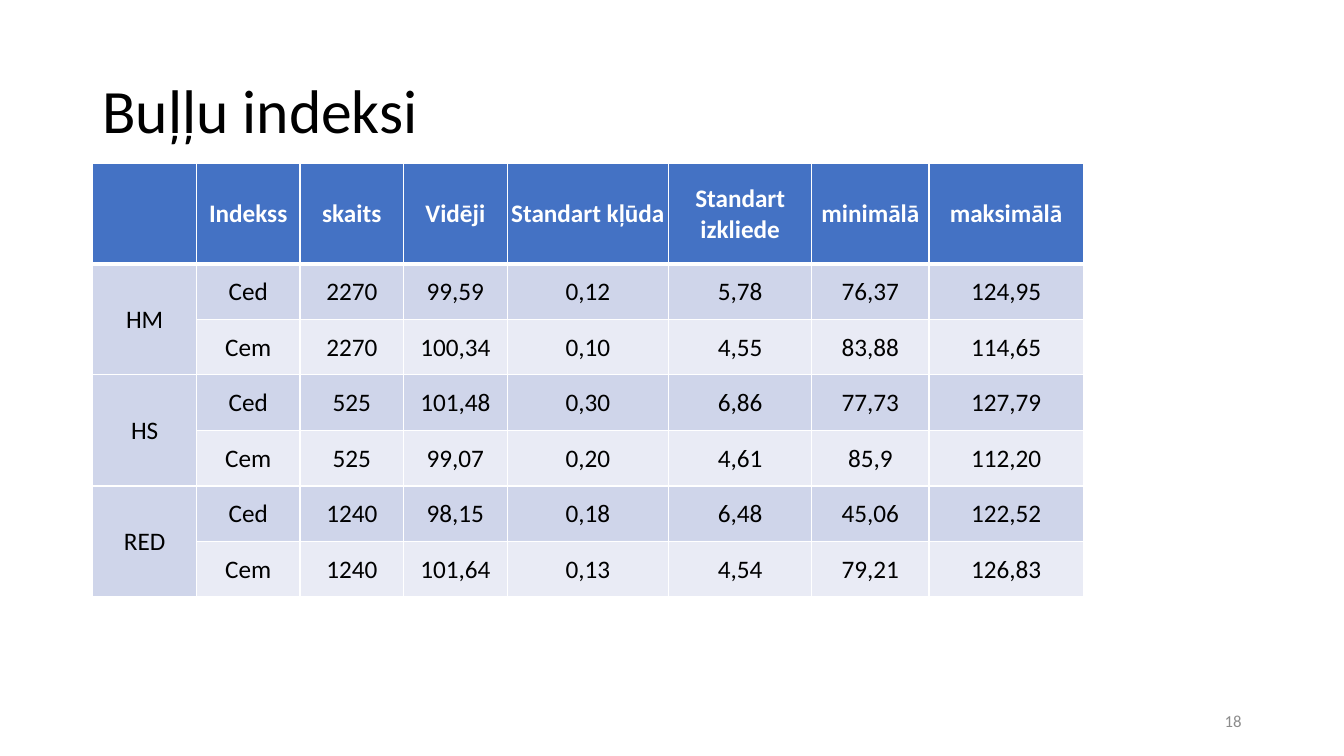
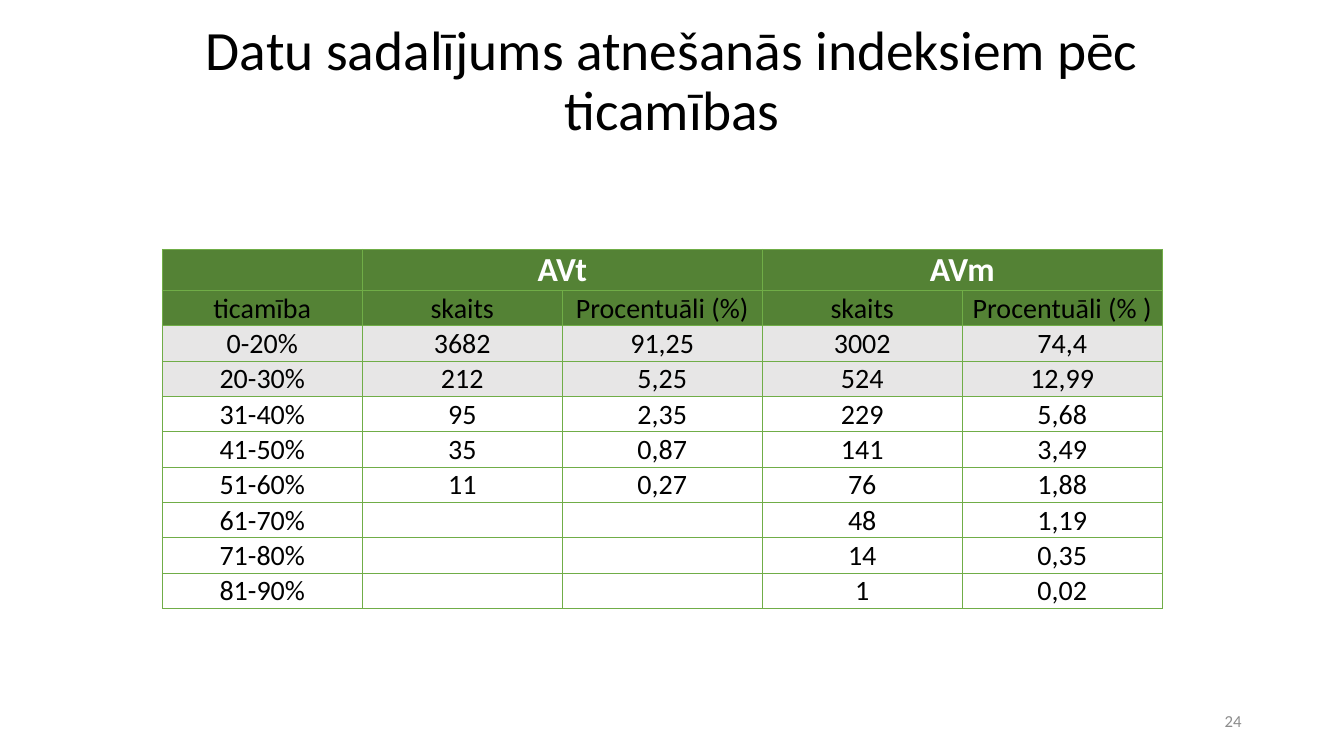
"""Build two slides of breeding index tables."""
from lxml import etree
from pptx import Presentation
from pptx.dml.color import RGBColor
from pptx.enum.text import MSO_ANCHOR, PP_ALIGN
from pptx.oxml.ns import qn
from pptx.util import Cm, Pt

FONT = "Calibri"
COLOURS = {
    "black": "000000", "white": "FFFFFF", "grey": "8C8C8C", "silver": "E7E6E6",
    "blue": "4472C4", "band": "CFD5EA", "pale": "E9EBF5",
    "green": "548235", "leaf": "70AD47",
}

SLIDES = [
    {
        "title": "Buļļu indeksi", "title_size": 44, "title_top": 1.02,
        "title_align": PP_ALIGN.LEFT, "number": "18",
        "left": 2.34, "top": 4.12,
        "columns": [2.61] * 4 + [4.07, 3.61, 2.95, 3.89],
        "heights": [2.53] + [1.4] * 6,
        "fills": ["blue"] + ["band", "pale"] * 3,
        "border": "white", "line": 1, "header_line": 3,
        "header_size": 18, "body_size": 18, "body_anchor": MSO_ANCHOR.MIDDLE,
        "merges": [(row, 0, row + 1, 0) for row in (1, 3, 5)],
        "rows": [
            ("", "Indekss", "skaits", "Vidēji", "Standart kļūda",
             "Standart izkliede", "minimālā", "maksimālā"),
            ("HM", "Ced", "2270", "99,59", "0,12", "5,78", "76,37", "124,95"),
            ("", "Cem", "2270", "100,34", "0,10", "4,55", "83,88", "114,65"),
            ("HS", "Ced", "525", "101,48", "0,30", "6,86", "77,73", "127,79"),
            ("", "Cem", "525", "99,07", "0,20", "4,61", "85,9", "112,20"),
            ("RED", "Ced", "1240", "98,15", "0,18", "6,48", "45,06", "122,52"),
            ("", "Cem", "1240", "101,64", "0,13", "4,54", "79,21", "126,83"),
        ],
    },
    {
        "title": "Datu sadalījums atnešanās indeksiem pēc ticamības",
        "title_size": 39.6, "title_top": 0.25,
        "title_align": PP_ALIGN.CENTER, "number": "24",
        "left": 4.09, "top": 6.28,
        "columns": [5.04] * 5,
        "heights": [1.03] + [0.89] * 9,
        "fills": ["green"] * 2 + ["silver"] * 2 + ["white"] * 6,
        "border": "leaf", "line": 0.5, "header_line": 0.5,
        "header_size": 24, "body_size": 20, "body_anchor": MSO_ANCHOR.BOTTOM,
        "merges": [(0, 1, 0, 2), (0, 3, 0, 4)],
        "rows": [
            ("", "AVt", "", "AVm", ""),
            ("ticamība", "skaits", "Procentuāli (%)", "skaits", "Procentuāli (% )"),
            ("0-20%", "3682", "91,25", "3002", "74,4"),
            ("20-30%", "212", "5,25", "524", "12,99"),
            ("31-40%", "95", "2,35", "229", "5,68"),
            ("41-50%", "35", "0,87", "141", "3,49"),
            ("51-60%", "11", "0,27", "76", "1,88"),
            ("61-70%", "", "", "48", "1,19"),
            ("71-80%", "", "", "14", "0,35"),
            ("81-90%", "", "", "1", "0,02"),
        ],
    },
]


def colour(name):
    return RGBColor.from_string(COLOURS[name])


def style_paragraph(para, size, colour_name, align, bold=False):
    para.alignment = align
    para.font.name = FONT
    para.font.size = Pt(size)
    para.font.bold = bold
    para.font.color.rgb = colour(colour_name)


def add_text(page, words, place, size, colour_name, align):
    box = page.shapes.add_textbox(*(Cm(length) for length in place))
    frame = box.text_frame
    frame.word_wrap = True
    frame.vertical_anchor = MSO_ANCHOR.MIDDLE
    para = frame.paragraphs[0]
    para.text = words
    style_paragraph(para, size, colour_name, align)
    return para


def set_borders(cell, colour_name, widths):
    properties = cell._tc.get_or_add_tcPr()
    for index, (edge, width) in enumerate(widths.items()):
        line = etree.Element(qn("a:" + edge), w=str(Pt(width)))
        fill = etree.SubElement(line, qn("a:solidFill"))
        etree.SubElement(fill, qn("a:srgbClr"), val=COLOURS[colour_name])
        properties.insert(index, line)


def style_cell(cell, content, row):
    header = row == 0
    cell.fill.solid()
    cell.fill.fore_color.rgb = colour(content["fills"][row])
    cell.margin_left = cell.margin_right = cell.margin_top = Cm(0.02)
    cell.margin_bottom = 0
    cell.vertical_anchor = MSO_ANCHOR.MIDDLE if header else content["body_anchor"]
    style_paragraph(
        cell.text_frame.paragraphs[0],
        content["header_size"] if header else content["body_size"],
        "white" if header else "black", PP_ALIGN.CENTER, header)
    widths = dict.fromkeys(("lnL", "lnR", "lnT", "lnB"), content["line"])
    if row < 2:
        widths["lnB" if header else "lnT"] = content["header_line"]
    set_borders(cell, content["border"], widths)


def add_index_table(page, content):
    rows, columns, heights = content["rows"], content["columns"], content["heights"]
    table = page.shapes.add_table(
        len(rows), len(columns), Cm(content["left"]), Cm(content["top"]),
        Cm(sum(columns)), Cm(sum(heights))).table
    table.horz_banding = False
    for column, width in zip(table.columns, columns):
        column.width = Cm(width)
    for row, values in enumerate(rows):
        table.rows[row].height = Cm(heights[row])
        for column, value in enumerate(values):
            cell = table.cell(row, column)
            cell.text = value
            style_cell(cell, content, row)
    for top, left, bottom, right in content["merges"]:
        table.cell(top, left).merge(table.cell(bottom, right))


def add_page(deck, content):
    page = deck.slides.add_slide(deck.slide_layouts[6])
    title = add_text(page, content["title"], (2.33, content["title_top"], 29.21, 3.68),
                     content["title_size"], "black", content["title_align"])
    title.line_spacing = 0.9
    add_index_table(page, content)
    add_text(page, content["number"], (23.92, 17.65, 7.62, 1.01),
             12, "grey", PP_ALIGN.RIGHT)


def main():
    deck = Presentation()
    deck.slide_width, deck.slide_height = Cm(33.87), Cm(19.05)
    for content in SLIDES:
        add_page(deck, content)
    deck.save("out.pptx")


if __name__ == "__main__":
    main()
